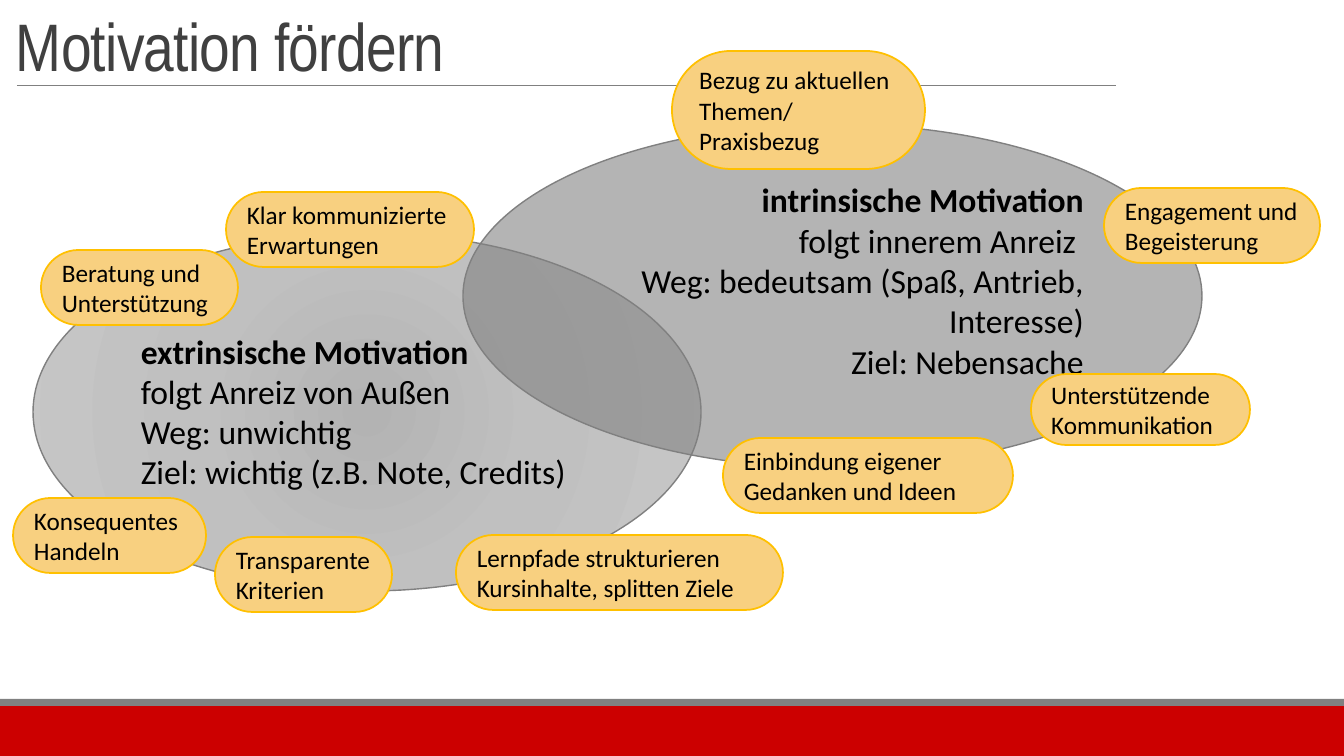
from lxml import etree
from pptx import Presentation
from pptx.dml.color import RGBColor
from pptx.enum.shapes import MSO_CONNECTOR, MSO_SHAPE
from pptx.enum.text import MSO_ANCHOR, PP_ALIGN
from pptx.oxml import parse_xml
from pptx.oxml.ns import nsdecls, qn
from pptx.util import Pt

TITLE = "Motivation fördern"
GREY, RED, PILL, GOLD = "808080", "CC0000", "F8D080", "FFC000"

# left, top, width, height in px
BARS = [((0, 706, 1344, 50), RED), ((0, 699, 1344, 7), GREY)]

EXTRINSIC = [
    "extrinsische Motivation",
    "folgt Anreiz von Außen",
    "Weg: unwichtig",
    "Ziel: wichtig (z.B. Note, Credits)",
]
INTRINSIC = [
    "intrinsische Motivation",
    "folgt innerem Anreiz ",
    "Weg: bedeutsam (Spaß, Antrieb, Interesse)",
    "Ziel: Nebensache",
]
STOPS = [(0, "B3B3B3"), (45, "C0C0C0"), (100, "C7C7C7")]

PILLS = [
    ("Bezug zu aktuellen Themen/\vPraxisbezug", (672, 51, 253, 118)),
    ("Engagement und Begeisterung", (1104, 188, 216, 75)),
    ("Einbindung eigener Gedanken und Ideen", (723, 438, 290, 75)),
    ("Beratung und Unterstützung", (41, 250, 197, 75)),
    ("Konsequentes Handeln", (13, 498, 193, 75)),
    ("Unterstützende Kommunikation", (1031, 374, 219, 71)),
    ("Klar kommunizierte Erwartungen", (226, 192, 248, 75)),
    ("Lernpfade strukturieren Kursinhalte, splitten Ziele", (456, 535, 327, 75)),
    ("Transparente Kriterien", (215, 537, 177, 75)),
]


def px(count):
    return round(count * 914400 / 100.8)


def color(code):
    return RGBColor.from_string(code)


def add_form(slide, kind, box, fill, edge=None, width=1):
    form = slide.shapes.add_shape(kind, *map(px, box))
    form.shadow.inherit = False
    form.fill.solid()
    form.fill.fore_color.rgb = color(fill)
    if edge:
        form.line.color.rgb = color(edge)
        form.line.width = Pt(width)
    else:
        form.line.fill.background()
    return form


def write(form, lines, size, font="Calibri", ink="000000",
          align=PP_ALIGN.LEFT, anchor=MSO_ANCHOR.MIDDLE):
    frame = form.text_frame
    frame.word_wrap = True
    frame.vertical_anchor = anchor
    frame.text = "\n".join(lines)
    for para in frame.paragraphs:
        para.alignment = align
        for run in para.runs:
            run.font.size = Pt(size)
            run.font.name = font
            run.font.color.rgb = color(ink)
    return frame


def add_oval(slide, box, lines, align):
    oval = add_form(slide, MSO_SHAPE.OVAL, box, GREY, GREY)
    frame = write(oval, lines, 24, align=align, anchor=MSO_ANCHOR.TOP)
    frame.paragraphs[0].runs[0].font.bold = True
    return oval


def set_glow(form, stops):
    """Fill the form with a gradient that spreads from its centre."""
    marks = "".join(
        f'<a:gs pos="{pos * 1000}"><a:srgbClr val="{code}"/></a:gs>'
        for pos, code in stops)
    glow = parse_xml(
        f'<a:gradFill {nsdecls("a")} rotWithShape="1"><a:gsLst>{marks}</a:gsLst>'
        '<a:path path="circle"><a:fillToRect l="100000" t="100000" '
        'r="100000" b="100000"/></a:path></a:gradFill>')
    solid = form.element.spPr.find(qn("a:solidFill"))
    solid.getparent().replace(solid, glow)


def set_alpha(form, percent):
    tint = form.element.spPr.find(qn("a:solidFill"))[0]
    etree.SubElement(tint, qn("a:alpha")).set("val", str(percent * 1000))


def add_title(slide):
    rule = slide.shapes.add_connector(
        MSO_CONNECTOR.STRAIGHT, px(17), px(85), px(1116), px(85))
    rule.line.color.rgb = color(GREY)
    rule.line.width = Pt(0.5)
    etree.SubElement(rule.element.spPr, qn("a:effectLst"))
    title = slide.shapes.add_textbox(px(6), px(-10), px(717), px(100))
    frame = write(title, [TITLE], 48, "Arial Narrow", "404040",
                  anchor=MSO_ANCHOR.BOTTOM)
    para = frame.paragraphs[0]
    para.line_spacing = 0.85
    para.runs[0].font.element.set("spc", "-50") if hasattr(
        para.runs[0].font, "element") else para.runs[0]._r.rPr.set("spc", "-50")


def main():
    deck = Presentation()
    deck.slide_width, deck.slide_height = px(1344), px(756)
    slide = deck.slides.add_slide(deck.slide_layouts[6])
    for box, fill in BARS:
        add_form(slide, MSO_SHAPE.RECTANGLE, box, fill)
    add_title(slide)

    outer = add_oval(slide, (33, 233, 668, 358), EXTRINSIC, PP_ALIGN.LEFT)
    outer.text_frame.margin_top = px(45)
    set_glow(outer, STOPS)
    inner = add_oval(slide, (463, 124, 739, 344), INTRINSIC, PP_ALIGN.RIGHT)
    set_alpha(inner, 59)

    for text, box in PILLS:
        pill = add_form(slide, MSO_SHAPE.ROUNDED_RECTANGLE, box, PILL, GOLD, 1.25)
        pill.adjustments[0] = 0.5
        write(pill, [text], 18)
    deck.save("out.pptx")


if __name__ == "__main__":
    main()
